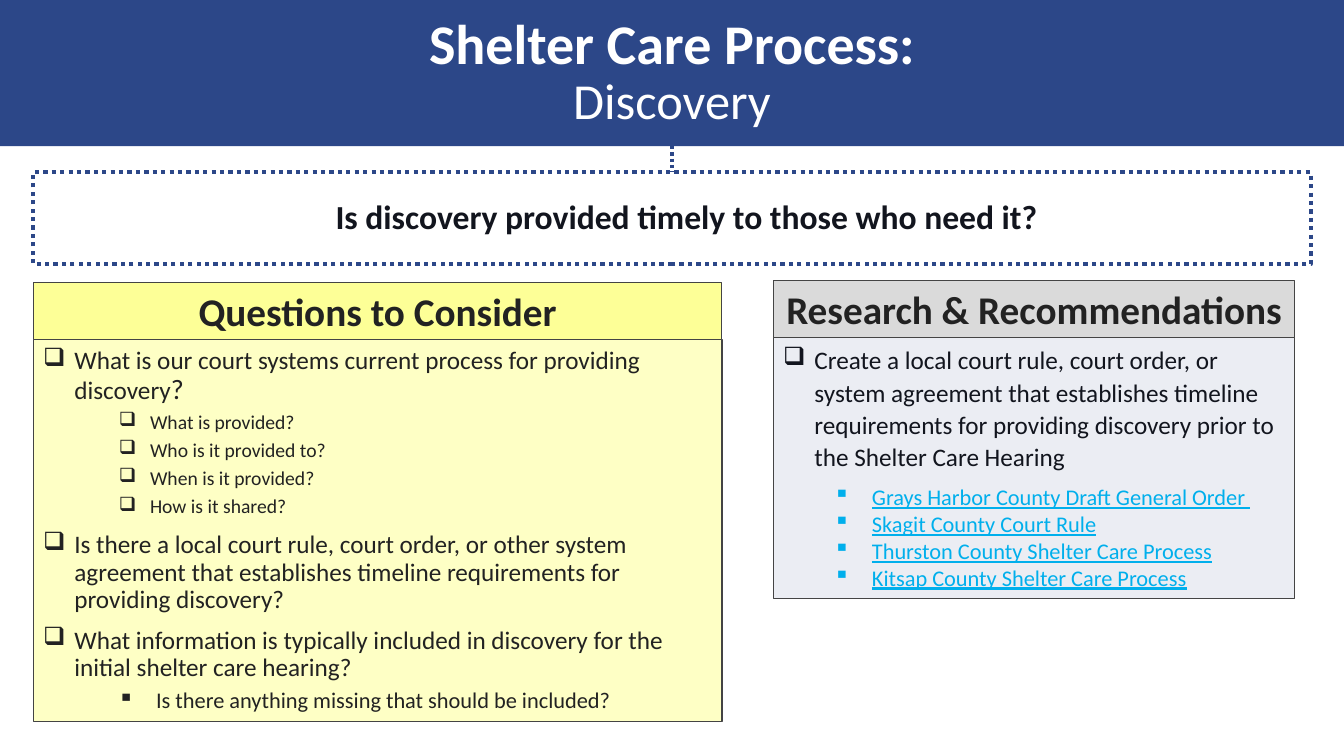
from lxml import etree
from pptx import Presentation
from pptx.dml.color import RGBColor
from pptx.enum.dml import MSO_LINE
from pptx.enum.shapes import MSO_CONNECTOR, MSO_SHAPE
from pptx.enum.text import MSO_ANCHOR, PP_ALIGN
from pptx.oxml.ns import qn
from pptx.util import Inches, Pt

RECTANGLE = MSO_SHAPE.RECTANGLE
LEFT, CENTER = PP_ALIGN.LEFT, PP_ALIGN.CENTER
TOP, MIDDLE = MSO_ANCHOR.TOP, MSO_ANCHOR.MIDDLE
DOTTED = MSO_LINE.ROUND_DOT
FONT = "Calibri"
NAVY, WHITE, INK, DARK = "2C4788", "FFFFFF", "222222", "12151E"
BORDER, LINK = "444444", "00AFEC"

# Content: paragraphs are (style name, [(text, size), ...])
TITLE = [("title", [("Shelter Care Process:\v", 40)]), ("subtitle", [("Discovery", 36)])]
KEY_QUESTION = "Is discovery provided timely to those who need it?"
QUESTIONS = [
    ("question", [("What is our court systems current process for providing discovery", 18),
                  ("?", 20)]),
    ("detail", [("What is provided?", 14)]),
    ("detail", [("Who is it provided to?", 14)]),
    ("detail", [("When is it provided?", 14)]),
    ("detail", [("How is it shared?", 14)]),
    ("question", [("Is there a local court rule, court order, or other system agreement "
                   "that establishes timeline requirements for providing discovery?", 18)]),
    ("question", [("What information is typically included in discovery for the "
                   "initial shelter care hearing?", 18)]),
    ("follow_up", [("Is there anything missing that should be included?", 16)]),
]
RESEARCH = [
    ("recommendation", [("Create a local court rule, court order, or system agreement that "
                         "establishes timeline requirements for providing discovery prior to "
                         "the Shelter Care Hearing", 18)]),
    ("resource", [("Grays Harbor County Draft General Order ", 16)]),
    ("resource", [("Skagit County Court Rule", 16)]),
    ("resource", [("Thurston County Shelter Care Process", 16)]),
    ("resource", [("Kitsap County Shelter Care Process", 16)]),
]

# Styles: paragraph format, font format, colour, bullet as (symbol, indent, hanging)
STYLES = {
    "title": ({"alignment": CENTER, "line_spacing": 0.9}, {"bold": True}, WHITE, None),
    "subtitle": ({}, {"bold": False}, WHITE, None),
    "heading": ({"alignment": CENTER}, {"bold": True}, INK, None),
    "key": ({"alignment": LEFT}, {"bold": True}, DARK, None),
    "question": ({"alignment": LEFT, "line_spacing": 0.9, "space_before": Pt(10)},
                 {}, INK, ("❑", 0.31, 0.31)),
    "detail": ({"alignment": LEFT, "level": 1, "line_spacing": 0.9, "space_before": Pt(5)},
               {}, INK, ("❑", 1.06, 0.31)),
    "follow_up": ({"alignment": LEFT, "level": 1, "line_spacing": 0.9, "space_before": Pt(5)},
                  {}, INK, ("▪", 1.12, 0.38)),
    "recommendation": ({"alignment": LEFT, "line_spacing": 1.07, "space_after": Pt(8)},
                       {}, DARK, ("❑", 0.31, 0.31)),
    "resource": ({"alignment": LEFT, "level": 1}, {"underline": True}, LINK, ("▪", 0.88, 0.38)),
}

# Layout in inches
WIDTH, HEIGHT = 13.33, 7.5
MARGIN = 0.33
BANNER_HEIGHT = 1.45
QUESTION_TOP, QUESTION_HEIGHT = 1.71, 0.91
HEADING_HEIGHT = 0.57
# Each panel: left, top, width, body height, heading, heading fill, body fill, anchor, content
PANELS = [
    (MARGIN, 2.8, 6.83, 3.79, "Questions to Consider", "FDFF97", "FEFFC5", MIDDLE, QUESTIONS),
    (7.67, 2.78, 5.17, 2.59, "Research & Recommendations", "DADADA", "EBEDF3", TOP, RESEARCH),
]


def color(hex_text):
    return RGBColor.from_string(hex_text)


def apply(target, values):
    for name, value in values.items():
        setattr(target, name, value)


def add_bullet(paragraph, symbol, indent, hanging):
    properties = paragraph._p.get_or_add_pPr()
    properties.set("marL", str(Inches(indent)))
    properties.set("indent", str(-Inches(hanging)))
    etree.SubElement(properties, qn("a:buChar")).set("char", symbol)


def write(shape, content, anchor=MIDDLE, wrap=True):
    """Fill a shape with styled paragraphs; a subtitle continues the title's paragraph."""
    frame = shape.text_frame
    apply(frame, {"word_wrap": wrap, "vertical_anchor": anchor})
    paragraph = None
    for style, runs in content:
        paragraph_format, font_format, font_color, bullet = STYLES[style]
        if paragraph is None:
            paragraph = frame.paragraphs[0]
        elif style != "subtitle":
            paragraph = frame.add_paragraph()
        apply(paragraph, paragraph_format)
        if bullet:
            add_bullet(paragraph, *bullet)
        for text, size in runs:
            run = paragraph.add_run()
            run.text = text.rstrip("\v")
            apply(run.font, {"name": FONT, "size": Pt(size), **font_format})
            run.font.color.rgb = color(font_color)
            if text.endswith("\v"):
                paragraph.add_line_break()


def set_line(line, line_color, width, dash=None):
    line.color.rgb = color(line_color)
    line.width = Pt(width)
    if dash:
        line.dash_style = dash


def add_box(slide, box, fill=None, line=None):
    shape = slide.shapes.add_shape(RECTANGLE, *map(Inches, box))
    shape.shadow.inherit = False
    if fill:
        shape.fill.solid()
        shape.fill.fore_color.rgb = color(fill)
    else:
        shape.fill.background()
    if line:
        set_line(shape.line, *line)
    else:
        shape.line.fill.background()
    return shape


def add_panel(slide, left, top, width, height, heading, heading_fill, fill, anchor, content):
    body = add_box(slide, (left, top + HEADING_HEIGHT, width, height), fill, (BORDER, 1))
    write(body, content, anchor)
    header = add_box(slide, (left, top, width, HEADING_HEIGHT), heading_fill, (BORDER, 0.75))
    write(header, [("heading", [(heading, 28)])], TOP, wrap=False)


def main():
    presentation = Presentation()
    apply(presentation, {"slide_width": Inches(WIDTH), "slide_height": Inches(HEIGHT)})
    slide = presentation.slides.add_slide(presentation.slide_layouts[6])

    write(add_box(slide, (0, 0, WIDTH, BANNER_HEIGHT), NAVY), TITLE)
    for panel in PANELS:
        add_panel(slide, *panel)

    add_box(slide, (MARGIN, QUESTION_TOP, WIDTH - 2 * MARGIN, QUESTION_HEIGHT),
            line=(NAVY, 3, DOTTED))
    middle = Inches(WIDTH / 2)
    link = slide.shapes.add_connector(MSO_CONNECTOR.STRAIGHT, middle, Inches(BANNER_HEIGHT),
                                      middle, Inches(QUESTION_TOP))
    set_line(link.line, NAVY, 2.25, DOTTED)
    etree.SubElement(link._element.spPr, qn("a:effectLst"))

    key_box = slide.shapes.add_textbox(*map(Inches, (3.23, 1.89, 7.23, 0.5)))
    write(key_box, [("key", [(KEY_QUESTION, 24)])], TOP, wrap=False)

    presentation.save("out.pptx")


if __name__ == "__main__":
    main()
